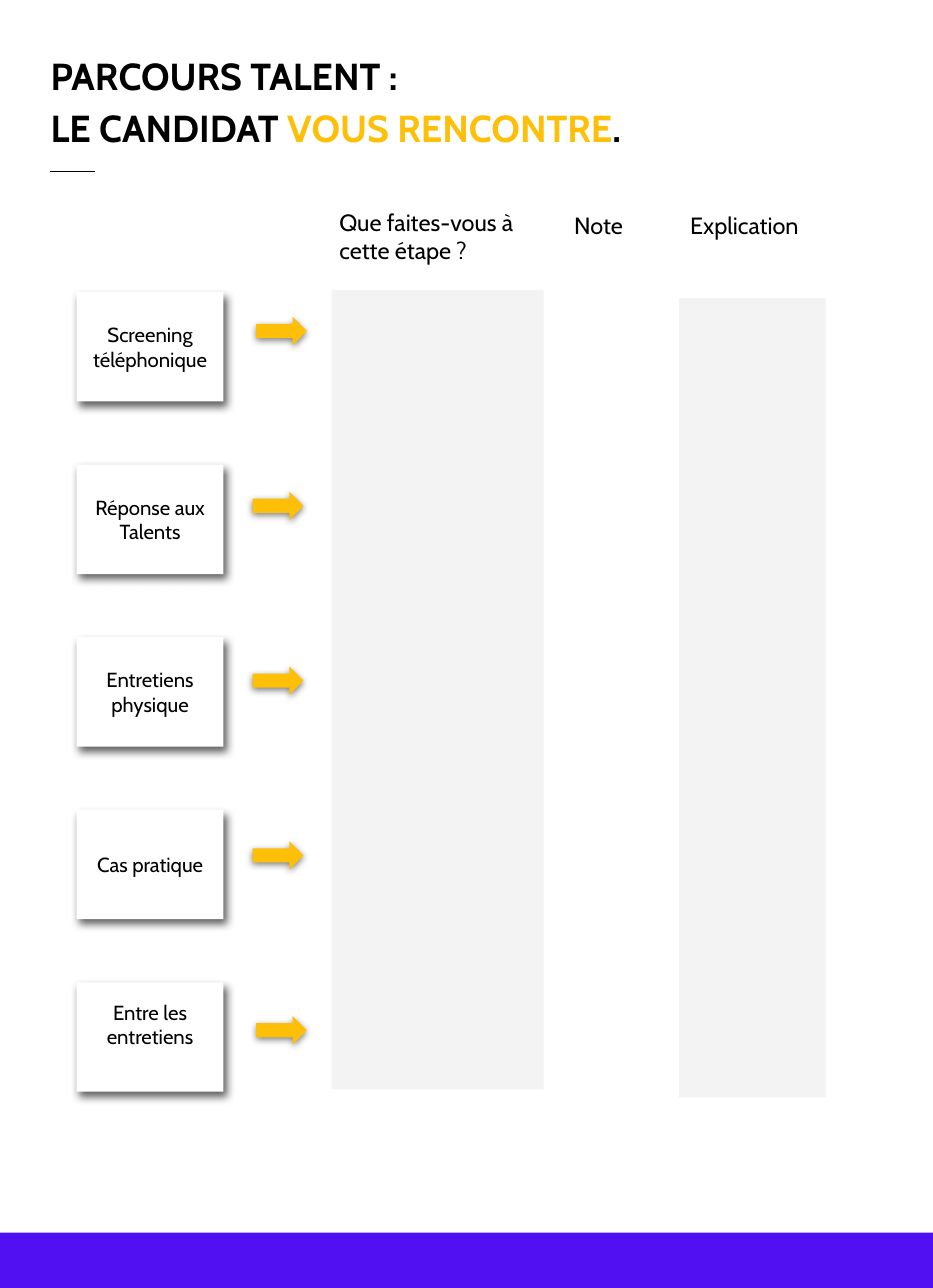
from pptx import Presentation
from pptx.dml.color import RGBColor
from pptx.enum.shapes import MSO_CONNECTOR as CONN, MSO_SHAPE as SHAPE
from pptx.enum.text import MSO_ANCHOR as ANCHOR, PP_ALIGN as ALIGN
from pptx.oxml.ns import qn
from pptx.util import Pt
from lxml.etree import SubElement

PX = 9144
BLACK, WHITE, YELLOW = "000000", "FFFFFF", "FDBF08"
VIOLET, GREY = "5010F2", "F3F3F3"
CARD_SHADOW = ("434343", 84, 5.6, 3.8, 60)
ARROW_SHADOW = (BLACK, 50, 4.5, 1.5, 90)


def px(*values):
    return [v * PX for v in values]


def color(hex_code):
    return RGBColor.from_string(hex_code)


def write(tf, paragraphs, size=13, bold=False, align=ALIGN.LEFT,
          anchor=ANCHOR.TOP, spacing=None, bottom=10):
    tf.word_wrap = True
    tf.vertical_anchor = anchor
    tf.margin_left, tf.margin_top, tf.margin_right, tf.margin_bottom = px(10, 10, 10, bottom)
    for i, runs in enumerate(paragraphs):
        p = tf.paragraphs[0] if i == 0 else tf.add_paragraph()
        p.alignment = align
        if spacing:
            p.line_spacing = spacing
        for text, hex_code in runs:
            r = p.add_run()
            r.text = text
            r.font.name = "Cabin"
            r.font.size = Pt(size)
            r.font.bold = bold
            r.font.color.rgb = color(hex_code)


class Page:
    def __init__(self, prs):
        self.s = prs.slides.add_slide(prs.slide_layouts[6])

    def shape(self, kind, box, fill, shadow=None):
        sp = self.s.shapes.add_shape(kind, *px(*box))
        sp.fill.solid()
        sp.fill.fore_color.rgb = color(fill)
        sp.line.fill.background()
        sp.shadow.inherit = False
        if shadow:
            self.shadow(sp, *shadow)
        return sp

    def shadow(self, sp, hex_code, alpha, blur, dist, angle):
        effects = sp._element.spPr.find(qn("a:effectLst"))
        outer = SubElement(effects, qn("a:outerShdw"), blurRad=str(Pt(blur)),
                           dist=str(Pt(dist)), dir=str(angle * 60000),
                           algn="bl", rotWithShape="0")
        clr = SubElement(outer, qn("a:srgbClr"), val=hex_code)
        SubElement(clr, qn("a:alpha"), val=str(alpha * 1000))

    def card(self, box, text, **fmt):
        sp = self.shape(SHAPE.RECTANGLE, box, WHITE, CARD_SHADOW)
        write(sp.text_frame, [[(text, BLACK)]], align=ALIGN.CENTER,
              anchor=ANCHOR.MIDDLE, **fmt)

    def text(self, box, paragraphs, **fmt):
        sp = self.s.shapes.add_textbox(*px(*box))
        write(sp.text_frame, paragraphs, **fmt)

    def line(self, *ends):
        c = self.s.shapes.add_connector(CONN.STRAIGHT, *px(*ends))
        c.line.color.rgb = color(BLACK)
        c.line.width = Pt(0.75)
        SubElement(c._element.spPr, qn("a:effectLst"))


def main():
    prs = Presentation()
    prs.slide_width, prs.slide_height = px(827, 1142)
    page = Page(prs)

    page.shape(SHAPE.RECTANGLE, (0, 1093, 827, 49), VIOLET)

    steps = [
        ("Screening téléphonique", 227, 10),
        ("Réponse aux Talents", 224, 10),
        ("Entretiens physique", 224, 10),
        ("Cas pratique", 224, 10),
        ("Entre les entretiens", 227, 32),
    ]
    for i, (text, arrow_x, bottom) in enumerate(steps):
        page.card((68, 259 + 153 * i, 130, 97), text, bottom=bottom)
        page.shape(SHAPE.RIGHT_ARROW, (arrow_x, 281 + 155 * i, 45, 25), YELLOW, ARROW_SHADOW)

    headings = [
        ("Que faites-vous à cette étape ?", 291, 174, 176),
        ("Note", 499, 177, 89),
        ("Explication", 602, 177, 176),
    ]
    for text, x, y, w in headings:
        page.text((x, y, w, 49), [[(text, BLACK)]], size=15)

    for x, y, w in [(294, 257, 188), (602, 264, 130)]:
        page.shape(SHAPE.RECTANGLE, (x, y, w, 709), GREY)

    page.text((35, 31, 717, 97), [
        [("PARCOURS TALENT :", BLACK)],
        [("LE CANDIDAT", BLACK), (" VOUS RENCONTRE", YELLOW), (".", BLACK)],
    ], size=24, bold=True, spacing=1.15)
    page.line(44, 152, 84, 152)

    prs.save("out.pptx")


if __name__ == "__main__":
    main()
